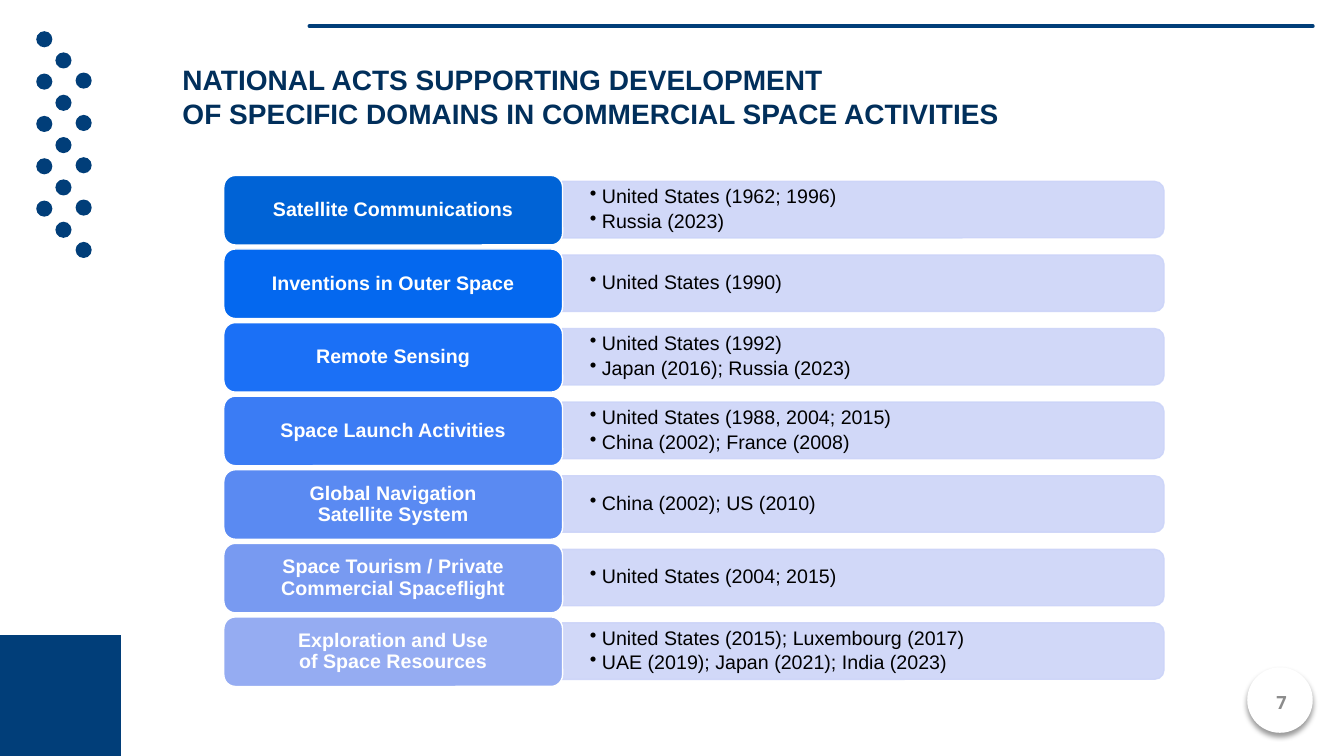
from lxml.etree import SubElement
from pptx import Presentation
from pptx.dml.color import RGBColor
from pptx.enum.shapes import MSO_CONNECTOR, MSO_SHAPE
from pptx.enum.text import MSO_ANCHOR, MSO_AUTO_SIZE, PP_ALIGN
from pptx.oxml.ns import qn
from pptx.util import Inches, Pt

NAVY = RGBColor(0x01, 0x3E, 0x79)
INK = RGBColor(0x01, 0x2F, 0x5B)
PALE = RGBColor(0xCC, 0xD4, 0xF8)
GRAY = RGBColor(0x8C, 0x8C, 0x8C)
WHITE = RGBColor(0xFF, 0xFF, 0xFF)
BLACK = RGBColor(0, 0, 0)

# Domain, label colour, national acts
ACTS = [
    ("Satellite Communications", "0063D6",
     ["United States (1962; 1996)", "Russia (2023)"]),
    ("Inventions in Outer Space", "0468EF", ["United States (1990)"]),
    ("Remote Sensing", "1B70F6",
     ["United States (1992)", "Japan (2016); Russia (2023)"]),
    ("Space Launch Activities", "3B7CF4",
     ["United States (1988, 2004; 2015)", "China (2002); France (2008)"]),
    ("Global Navigation\vSatellite System", "5A8AF2",
     ["China (2002); US (2010)"]),
    ("Space Tourism / Private Commercial Spaceflight", "789AF1",
     ["United States (2004; 2015)"]),
    ("Exploration and Use\vof Space Resources", "95ACF2",
     ["United States (2015); Luxembourg (2017)",
      "UAE (2019); Japan (2021); India (2023)"]),
]


def add(parent, tag, **attrs):
    return SubElement(parent, qn(tag), attrs)


class Deck:
    """The current slide and its style."""

    label = dict(name="Arial", size=Pt(14), bold=True)
    body = dict(name="Arial", size=Pt(14), bold=False)
    head = dict(name="Arial", size=Pt(20), bold=True)
    page = dict(name="Open Sans", size=Pt(13), bold=True)

    def __init__(self):
        self.prs = Presentation()
        self.prs.slide_width = Inches(13.33)
        self.prs.slide_height = Inches(7.5)
        self.slide = self.prs.slides.add_slide(self.prs.slide_layouts[5])
        self.shapes = self.slide.shapes

    def fill_text(self, shape, lines, style, color, align, frame=None,
                  para=None):
        text = shape.text_frame
        base = dict(word_wrap=True, vertical_anchor=MSO_ANCHOR.MIDDLE)
        for key, val in {**base, **(frame or {})}.items():
            setattr(text, key, val)
        text.text = "\n".join(lines)
        for item in text.paragraphs:
            for key, val in dict(alignment=align, **(para or {})).items():
                setattr(item, key, val)
            for run in item.runs:
                run.font.color.rgb = color
                for key, val in style.items():
                    setattr(run.font, key, val)
        return text

    def title(self, box, lines):
        shape = self.shapes.title
        for key, val in zip(("left", "top", "width", "height"), box):
            setattr(shape, key, Inches(val))
        self.fill_text(shape, lines, self.head, INK, PP_ALIGN.LEFT,
                       dict(vertical_anchor=MSO_ANCHOR.TOP,
                            auto_size=MSO_AUTO_SIZE.SHAPE_TO_FIT_TEXT))

    def shape(self, kind, box, fill, line=None):
        item = self.shapes.add_shape(kind, *map(Inches, box))
        item.shadow.inherit = False
        item.fill.solid()
        item.fill.fore_color.rgb = fill
        if line is None:
            item.line.fill.background()
        else:
            item.line.color.rgb = line
            item.line.width = Pt(1)
        return item

    def text(self, box, lines, style, color, align, frame=None, para=None):
        item = self.shapes.add_textbox(*map(Inches, box))
        return self.fill_text(item, lines, style, color, align, frame, para)

    def rule(self, left, right, top):
        item = self.shapes.add_connector(
            MSO_CONNECTOR.STRAIGHT, *map(Inches, (left, top, right, top)))
        item.line.color.rgb = NAVY
        item.line.width = Pt(2.83)
        item._element.spPr.find(qn("a:ln")).set("cap", "rnd")
        add(item._element.spPr, "a:effectLst")

    def badge(self, box):
        item = self.shape(MSO_SHAPE.OVAL, box, WHITE)
        glow = add(item._element.spPr.find(qn("a:effectLst")), "a:outerShdw",
                   blurRad=str(Pt(4)), dist=str(Pt(3)), dir="5400000",
                   algn="ctr", rotWithShape="0")
        add(add(glow, "a:srgbClr", val="000000"), "a:alpha", val="40000")

    def band(self, mid, lines):
        wide, high = 0.56, 5.97
        item = self.shape(MSO_SHAPE.ROUND_2_SAME_RECTANGLE,
                          (8.56 - wide / 2, mid - high / 2, wide, high),
                          PALE, PALE)
        item.rotation = 90
        for tint in item._element.spPr.iter(qn("a:srgbClr")):
            add(tint, "a:alpha", val="90000")
        text = self.text(
            (5.58, mid - 0.25, 5.94, 0.5), lines, self.body, BLACK,
            PP_ALIGN.LEFT,
            dict(margin_left=Inches(0.27), margin_right=Inches(0.27),
                 margin_top=0, margin_bottom=0),
            dict(line_spacing=0.9, space_after=Pt(2.4)))
        for para in text.paragraphs:
            prop = para._p.get_or_add_pPr()
            prop.set("marL", str(Inches(0.12)))
            prop.set("indent", str(-Inches(0.12)))
            add(prop, "a:buChar", char="•")

    def tag(self, top, name, fill):
        item = self.shape(MSO_SHAPE.ROUNDED_RECTANGLE,
                          (2.22, top, 3.36, 0.69), fill, WHITE)
        self.fill_text(item, [name], self.label, WHITE, PP_ALIGN.CENTER,
                       dict(margin_left=Inches(0.1), margin_right=Inches(0.1),
                            margin_top=Inches(0.03),
                            margin_bottom=Inches(0.03)),
                       dict(line_spacing=0.9))


def main():
    deck = Deck()

    # Corner block, dot pattern and top rule
    deck.shape(MSO_SHAPE.RECTANGLE, (0, 6.3, 1.2, 1.2), NAVY)
    for row in range(5):
        for left, top in ((0.36, 0.31), (0.55, 0.52), (0.75, 0.72)):
            deck.shape(MSO_SHAPE.OVAL,
                       (left, top + row * 0.42, 0.16, 0.16), NAVY)
    deck.rule(3.07, 13.02, 0.26)

    # Page number
    deck.badge((12.37, 6.62, 0.65, 0.65))
    deck.text((12.34, 6.77, 0.74, 0.4), ["7"], deck.page, GRAY,
              PP_ALIGN.CENTER)

    # Domains and their acts
    for row, (name, fill, lines) in enumerate(ACTS):
        top = 1.74 + row * 0.73
        deck.band(top + 0.34, lines)
        deck.tag(top, name, RGBColor.from_string(fill))

    # Title
    deck.title((1.71, 0.57, 11.13, 0.77),
               ["NATIONAL ACTS SUPPORTING DEVELOPMENT",
                "OF SPECIFIC DOMAINS IN COMMERCIAL SPACE ACTIVITIES"])

    deck.prs.save("out.pptx")


if __name__ == "__main__":
    main()
